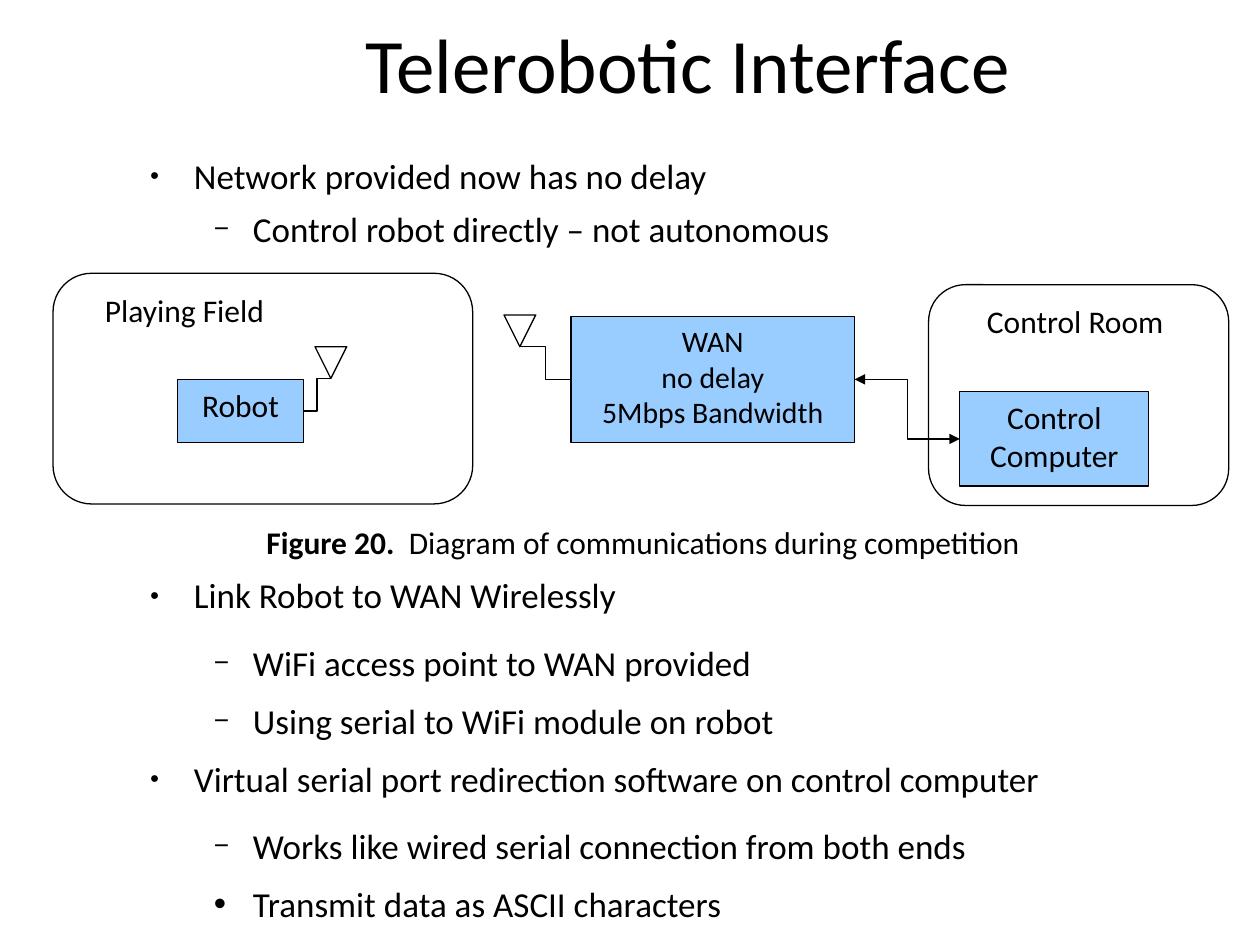
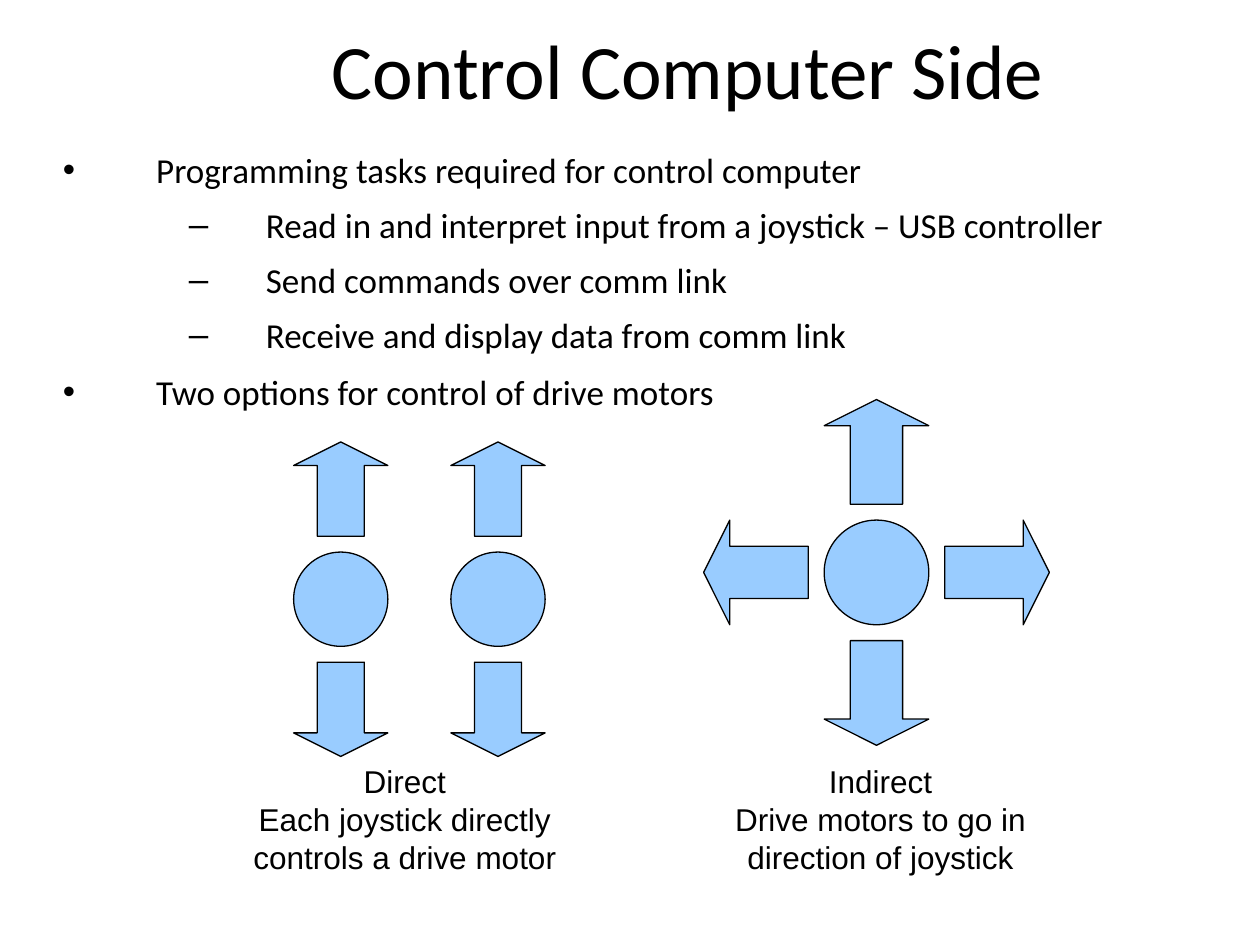
import pptx
import pptx.util
import pptx.dml.color
import pptx.enum.shapes
import pptx.enum.text
import pptx.oxml.ns
import lxml.etree

Cm, Pt = pptx.util.Cm, pptx.util.Pt
MSO = pptx.enum.shapes.MSO_SHAPE
ALIGN = pptx.enum.text.PP_ALIGN
ANCHOR = pptx.enum.text.MSO_ANCHOR
qn = pptx.oxml.ns.qn

BLACK = pptx.dml.color.RGBColor(0x00, 0x00, 0x00)
WHITE = pptx.dml.color.RGBColor(0xFF, 0xFF, 0xFF)
BLUE = pptx.dml.color.RGBColor(0x99, 0xCC, 0xFF)
FONT = "Calibri"
THIN = Pt(0.75)

# Bullet styles: level, text indent and hang in cm, sign, sign size in %
DOT = (1, 2.39, 0.89, "●", 45)
DASH = (2, 3.58, 0.79, "−", 75)
SPOT = (2, 3.58, 0.79, "•", 100)
MAIN = (0, 1.88, 1.88, "•", 100)
SUB = (1, 4.09, 1.55, "–", 100)

# Each item: style, text, space before, space after
TOP = [
    (DOT, "Network provided now has no delay", 0, 0),
    (DASH, "Control robot directly – not autonomous", 6, 0),
]
LINKS = [
    (DOT, "Link Robot to WAN Wirelessly", 0, 14.2),
    (DASH, "WiFi access point to WAN provided", 0, 8.5),
    (DASH, "Using serial to WiFi module on robot", 0, 8.5),
    (DOT, "Virtual serial port redirection software on control computer", 0, 14.2),
    (DASH, "Works like wired serial connection from both ends", 0, 8.5),
    (SPOT, "Transmit data as ASCII characters", 0, 14.2),
]
TASKS = [
    (MAIN, "Programming tasks required for control computer", 0, 0),
    (SUB, "Read in and interpret input from a joystick – USB controller", 7, 0),
    (SUB, "Send commands over comm link", 7, 0),
    (SUB, "Receive and display data from comm link", 7, 0),
    (MAIN, "Two options for control of drive motors", 8, 0),
]


def add_run(para, text, size, bold=False, font=FONT):
    run = para.add_run()
    run.text = text
    run.font.name = font
    run.font.size = Pt(size)
    run.font.bold = bold
    run.font.color.rgb = BLACK


def paras(frame, count):
    """Yield the first paragraph of the frame, then new ones."""
    for i in range(count):
        yield frame.add_paragraph() if i else frame.paragraphs[0]


def write(frame, lines, size=18, align=ALIGN.CENTER, font=FONT):
    frame.word_wrap = True
    for para, line in zip(paras(frame, len(lines)), lines):
        para.alignment = align
        add_run(para, line, size, font=font)


def text_box(slide, box):
    frame = slide.shapes.add_textbox(*map(Cm, box)).text_frame
    frame.word_wrap = True
    return frame


def add_title(slide, text, box):
    title = slide.shapes.title
    title.left, title.top, title.width, title.height = map(Cm, box)
    title.text_frame.vertical_anchor = ANCHOR.MIDDLE
    write(title.text_frame, [text], 44)


def add_bullet(para, style):
    level, left, hang, sign, size = style
    para.level = level
    props = para._p.get_or_add_pPr()
    props.set("marL", str(Cm(left)))
    props.set("indent", str(-Cm(hang)))
    for tag, key, value in (
        ("a:buSzPct", "val", str(size * 1000)),
        ("a:buFont", "typeface", "Arial"),
        ("a:buChar", "char", sign),
    ):
        lxml.etree.SubElement(props, qn(tag)).set(key, value)


def add_list(slide, box, items, flush=False):
    frame = text_box(slide, box)
    if flush:
        frame.margin_left = frame.margin_right = 0
        frame.margin_top = frame.margin_bottom = 0
    for para, (style, text, before, after) in zip(paras(frame, len(items)), items):
        add_bullet(para, style)
        para.line_spacing = 1.02
        para.space_before = Pt(before)
        para.space_after = Pt(after)
        add_run(para, text, 20)


def add_shape(slide, kind, box, fill=BLUE):
    shape = slide.shapes.add_shape(kind, *map(Cm, box))
    shape.shadow.inherit = False
    shape.fill.solid()
    shape.fill.fore_color.rgb = fill
    shape.line.color.rgb = BLACK
    shape.line.width = THIN
    return shape


def add_node(slide, box, lines, size=18):
    node = add_shape(slide, MSO.FLOWCHART_PROCESS, box)
    node.text_frame.vertical_anchor = ANCHOR.TOP
    write(node.text_frame, lines, size)
    return node


def add_room(slide, box, name, inset):
    room = add_shape(slide, MSO.ROUNDED_RECTANGLE, box, WHITE)
    room.text_frame.vertical_anchor = ANCHOR.TOP
    room.text_frame.margin_left = Cm(inset)
    write(room.text_frame, [name], align=ALIGN.LEFT)


def add_wire(slide, start=(0, 0), end=(0, 0)):
    kind = pptx.enum.shapes.MSO_CONNECTOR.ELBOW
    wire = slide.shapes.add_connector(kind, *start, *end)
    wire.line.color.rgb = BLACK
    wire.line.width = THIN
    lxml.etree.SubElement(wire._element.spPr, qn("a:effectLst"))
    return wire


def add_heads(wire):
    for tag in ("a:headEnd", "a:tailEnd"):
        lxml.etree.SubElement(wire.line._get_or_add_ln(), qn(tag)).set("type", "triangle")


def add_mast(slide, box, node, right):
    """Draw an antenna and wire its tip to the right or left side of a node."""
    mast = add_shape(slide, MSO.FLOWCHART_MERGE, box, WHITE)
    tip = (mast.left + mast.width // 2, mast.top + mast.height)
    side = node.left + (node.width if right else 0)
    add_wire(slide, tip, (side, node.top + node.height // 2))


def add_net(slide, box):
    """Draw the robot, the network and the control room with a caption."""
    def at(x, y, w, h):
        return box[0] + x, box[1] + y, w, h

    wan = add_node(slide, at(10.44, 0.87, 5.72, 2.54),
                   ["WAN", "no delay", "5Mbps Bandwidth"], 17)
    add_room(slide, at(17.65, 0.23, 6.05, 4.45), "Control Room", 0.96)
    add_room(slide, at(0, 0, 8.46, 4.65), "Playing Field", 0.82)
    robot = add_node(slide, at(2.51, 2.14, 2.54, 1.27), ["Robot"])
    desk = add_node(slide, at(18.28, 2.39, 3.81, 1.9), ["Control", "Computer"])

    link = add_wire(slide)
    link.begin_connect(desk, 1)
    link.end_connect(wan, 3)
    add_heads(link)
    add_mast(slide, at(9.09, 0.84, 0.64, 0.64), wan, False)
    add_mast(slide, at(5.28, 1.48, 0.64, 0.64), robot, True)

    para = text_box(slide, at(3.22, 4.9, 17.35, 1.02)).paragraphs[0]
    para.alignment = ALIGN.CENTER
    add_run(para, "Figure 20.  ", 18, True)
    add_run(para, "Diagram of communications during competition", 18)


UP = (MSO.UP_ARROW, 0, -1)
DOWN = (MSO.DOWN_ARROW, 0, 1)
LEFT = (MSO.LEFT_ARROW, -1, 0)
RIGHT = (MSO.RIGHT_ARROW, 1, 0)


def add_stick(slide, mid, size, ways):
    """Draw a joystick around its middle, with an arrow for each way."""
    x, y = mid[0] - size / 2, mid[1] - size / 2
    step = size + 0.32
    add_shape(slide, MSO.OVAL, (x, y, size, size))
    for kind, dx, dy in ways:
        arrow = add_shape(slide, kind, (x + dx * step, y + dy * step, size, size))
        arrow.adjustments[1] = 0.25


def add_mode(slide, box, mids, size, ways, lines):
    """Draw one way of driving: its joysticks, and a caption at the foot."""
    left, top, width, height = box
    for x, y in mids:
        add_stick(slide, (left + x, top + y), size, ways)
    foot = 2.57
    frame = text_box(slide, (left, top + height - foot, width, foot))
    write(frame, lines, font="Arial")


def new_slide(deck):
    return deck.slides.add_slide(deck.slide_layouts[5])


def link_slide(deck):
    slide = new_slide(deck)
    add_title(slide, "Telerobotic Interface", (3.61, -0.64, 20.52, 3.81))
    add_net(slide, (1.07, 5.51))
    add_list(slide, (1.27, 11.43, 22.86, 6.35), LINKS)
    add_list(slide, (1.27, 2.97, 22.86, 3.38), TOP)


def drive_slide(deck):
    slide = new_slide(deck)
    add_title(slide, "Control Computer Side", (3.61, 0.3, 20.52, 2.16))
    add_list(slide, (1.27, 2.97, 22.86, 5.92), TASKS, flush=True)
    add_mode(slide, (4.45, 8.05, 7.42, 9.76), [(2.42, 4.03), (5.59, 4.03)], 1.9,
             [UP, DOWN],
             ["Direct", "Each joystick directly controls a drive motor"])
    add_mode(slide, (14.17, 8.05, 7.16, 9.76), [(3.5, 3.49)], 2.11,
             [UP, DOWN, LEFT, RIGHT],
             ["Indirect", "Drive motors to go in direction of joystick"])


def main():
    deck = pptx.Presentation()
    deck.slide_width, deck.slide_height = Cm(25.4), Cm(19.05)
    link_slide(deck)
    drive_slide(deck)
    deck.save("out.pptx")


if __name__ == "__main__":
    main()
